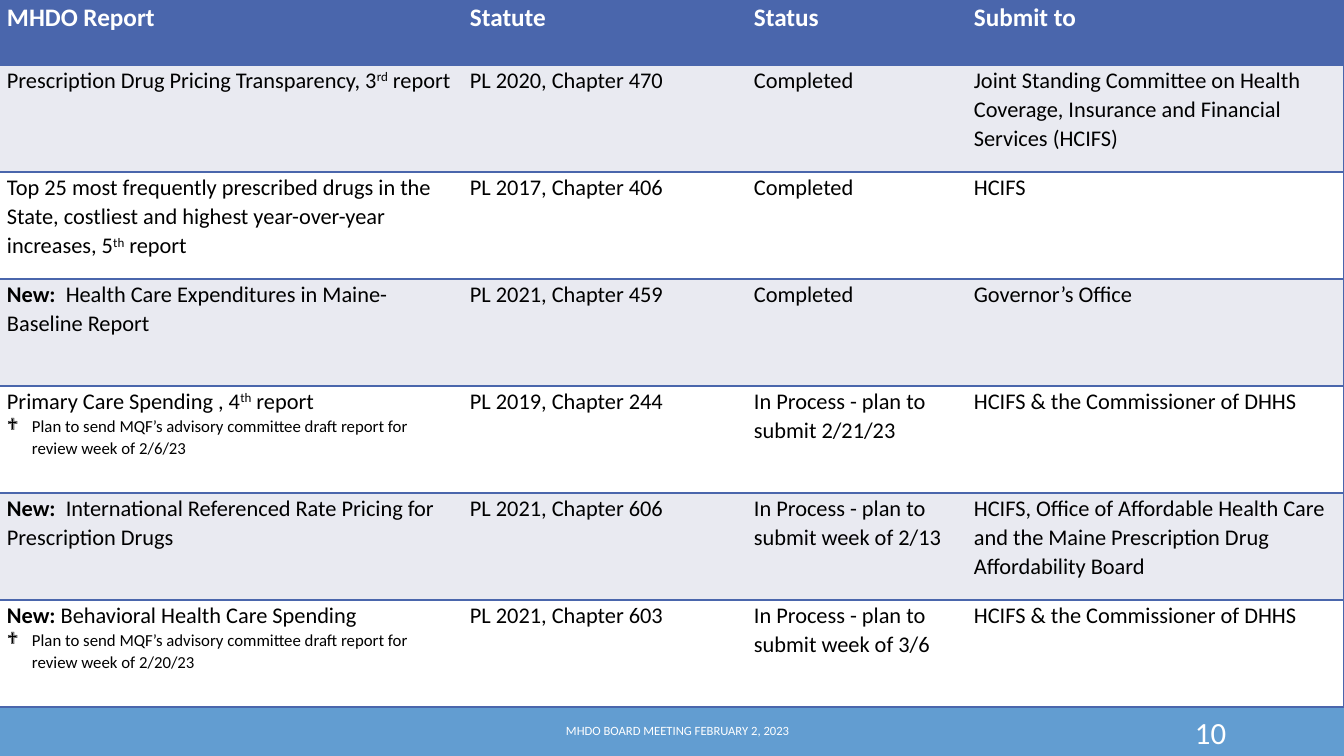
from lxml.etree import SubElement
from pptx import Presentation
from pptx.dml.color import RGBColor
from pptx.enum.shapes import MSO_SHAPE as SHAPE
from pptx.enum.text import MSO_ANCHOR as ANCHOR, PP_ALIGN as ALIGN
from pptx.oxml.ns import qn
from pptx.util import Emu, Pt

HEADERS = ["MHDO Report", "Statute", "Status", "Submit to"]
DHHS = "HCIFS & the Commissioner of DHHS"
NOTE = "Plan to send MQF’s advisory committee draft report for review week of "
REPORTS = [
    ([("Prescription Drug Pricing Transparency, 3", ""), ("rd", "sup"), (" report", "")], "",
     "PL 2020, Chapter 470", "Completed",
     "Joint Standing Committee on Health Coverage, Insurance and Financial Services (HCIFS)"),
    ([("Top 25 most frequently prescribed drugs in the State, costliest and highest "
       "year-over-year increases, 5", ""), ("th", "sup"), (" report", "")], "",
     "PL 2017, Chapter 406", "Completed", "HCIFS"),
    ([("New:  ", "bold"), ("Health Care Expenditures in Maine-Baseline Report", "")], "",
     "PL 2021, Chapter 459", "Completed", "Governor’s Office"),
    ([("Primary Care Spending , 4", ""), ("th", "sup"), (" report", "")], NOTE + "2/6/23",
     "PL 2019, Chapter 244", "In Process - plan to submit 2/21/23", DHHS),
    ([("New:  ", "bold"), ("International Referenced Rate Pricing for Prescription Drugs", "")], "",
     "PL 2021, Chapter 606", "In Process - plan to submit week of 2/13",
     "HCIFS, Office of Affordable Health Care and the Maine Prescription Drug Affordability Board"),
    ([("New: ", "bold"), ("Behavioral Health Care Spending", "")], NOTE + "2/20/23",
     "PL 2021, Chapter 603", "In Process - plan to submit week of 3/6", DHHS),
]
FOOTERS = [
    ("MHDO BOARD MEETING FEBRUARY 2, 2023", (412, 706, 531, 49), 9, ALIGN.CENTER),
    ("10", (1092, 712, 144, 40), 22, ALIGN.RIGHT),
]
COLS = [463, 284, 220, 378]
HEAD_H, ROW_H = 65, 107
BLUE, SKY, BAND, WHITE, BLACK = "4A66AC", "629DD1", "E9EAF1", "FFFFFF", "000000"


def px(n):
    return Emu(round(n * 914400 / 100.8))


def rgb(color):
    return RGBColor.from_string(color)


def put(obj, **values):
    for name, value in values.items():
        setattr(obj, name, value)


def add_run(p, text, size, color, style=""):
    r = p.add_run()
    r.text = text
    put(r.font, name="Calibri", size=Pt(size), bold=style == "bold")
    r.font.color.rgb = rgb(color)
    if style == "sup":
        r.font._element.set("baseline", "30000")


def add_bullet(p):
    pPr = p._p.get_or_add_pPr()
    pPr.set("marL", str(px(25)))
    pPr.set("indent", str(-px(25)))
    SubElement(pPr, qn("a:buFont"), typeface="Wingdings")
    SubElement(pPr, qn("a:buChar"), char="❖")


def border(cell, first, last):
    tcPr = cell._tc.get_or_add_tcPr()
    for side, shown in (("L", first), ("R", last), ("T", True), ("B", True)):
        ln = SubElement(tcPr, qn("a:ln" + side), w=str(Pt(1)))
        if shown:
            fill = SubElement(ln, qn("a:solidFill"))
            SubElement(fill, qn("a:srgbClr"), val=BLUE)
        else:
            SubElement(ln, qn("a:noFill"))


def fill_cell(cell, runs, note, size, color, fill):
    put(cell, margin_left=px(8), margin_right=px(8), margin_top=0, margin_bottom=0)
    cell.fill.solid()
    cell.fill.fore_color.rgb = rgb(fill)
    tf = cell.text_frame
    p = tf.paragraphs[0]
    p.line_spacing = 1.07
    for text, style in runs:
        add_run(p, text, size, color, style)
    if note:
        p = tf.add_paragraph()
        p.line_spacing = 1.07
        add_bullet(p)
        add_run(p, note, 12, color)


prs = Presentation()
put(prs, slide_width=px(1344), slide_height=px(756))
s = prs.slides.add_slide(prs.slide_layouts[6])

sp = s.shapes.add_shape(SHAPE.RECTANGLE, 0, px(706), px(1344), px(50))
sp.shadow.inherit = False
sp.fill.solid()
sp.fill.fore_color.rgb = rgb(SKY)
sp.line.fill.background()

height = HEAD_H + ROW_H * len(REPORTS)
tbl = s.shapes.add_table(len(REPORTS) + 1, len(COLS), px(-1), px(0),
                         px(sum(COLS)), px(height)).table
put(tbl, first_row=False, horz_banding=False)
for col, width in zip(tbl.columns, COLS):
    col.width = px(width)
for i, row in enumerate(tbl.rows):
    row.height = px(ROW_H if i else HEAD_H)
    for j, cell in enumerate(row.cells):
        border(cell, j == 0, j == len(COLS) - 1)
        if i == 0:
            fill_cell(cell, [(HEADERS[j], "bold")], "", 18, WHITE, BLUE)
            continue
        title, note, *details = REPORTS[i - 1]
        runs = [(details[j - 1], "")] if j else title
        fill_cell(cell, runs, "" if j else note, 16, BLACK, BAND if i % 2 else WHITE)

for text, box, size, align in FOOTERS:
    tf = s.shapes.add_textbox(*map(px, box)).text_frame
    put(tf, word_wrap=True, vertical_anchor=ANCHOR.MIDDLE)
    p = tf.paragraphs[0]
    p.alignment = align
    add_run(p, text, size, WHITE)

prs.save("out.pptx")
